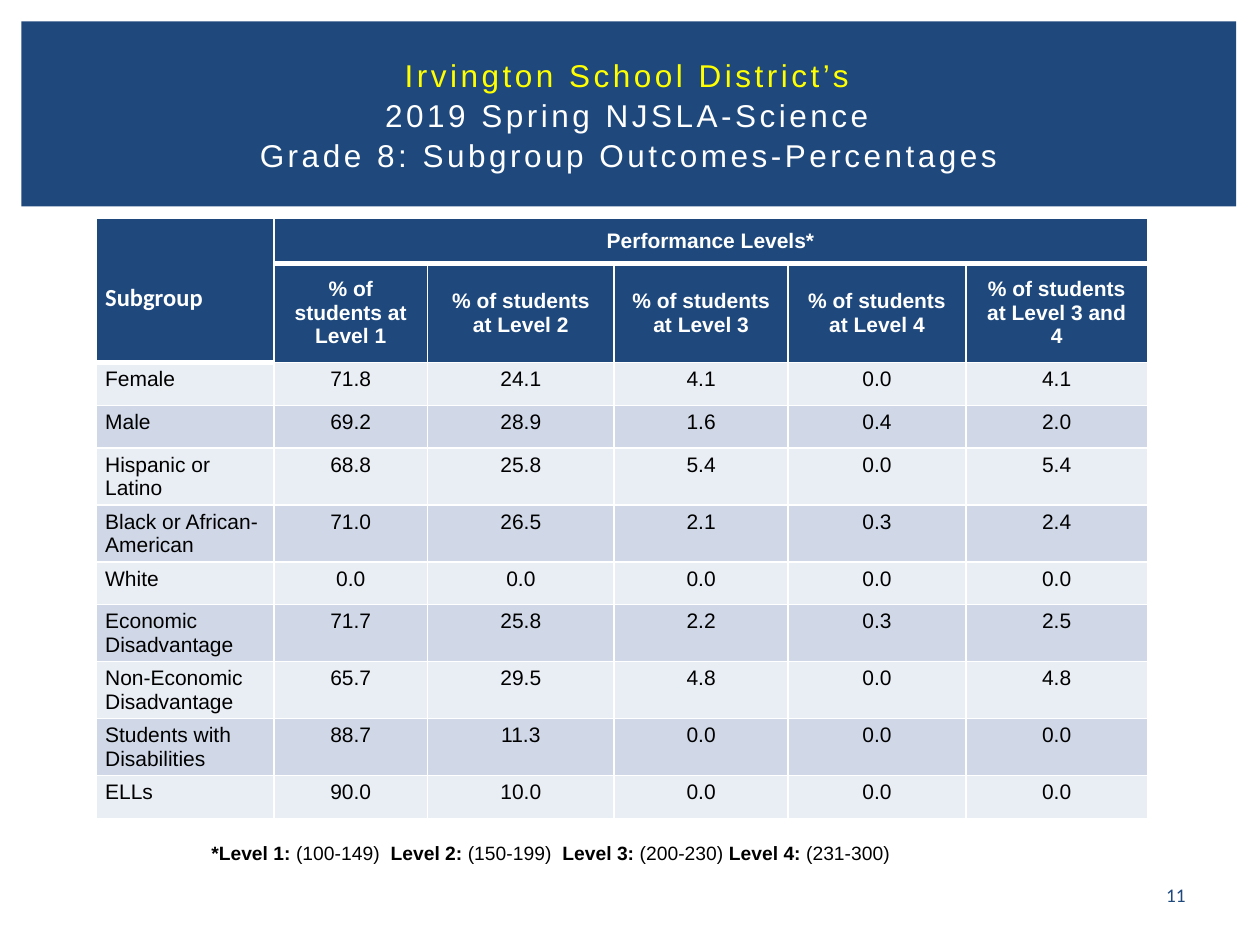
from collections import namedtuple
from dataclasses import dataclass

from lxml.etree import SubElement
from pptx import Presentation
from pptx.dml.color import RGBColor
from pptx.enum.shapes import MSO_SHAPE
from pptx.enum.text import MSO_ANCHOR, MSO_AUTO_SIZE, PP_ALIGN
from pptx.oxml.ns import qn
from pptx.util import Cm, Pt

Box = namedtuple("Box", "left top width height")


@dataclass(frozen=True)
class Theme:
    navy: str = "1F497D"
    white: str = "FFFFFF"
    black: str = "000000"
    yellow: str = "FFFF00"
    bands: tuple = ("E9EDF4", "D0D8E8")
    sans: str = "Arial"
    label: str = "Calibri"
    title: int = 18
    corner: int = 14
    cell: int = 12
    note: int = 11


THEME = Theme()
TITLE = [
    ("Irvington School District’s", THEME.yellow),
    ("2019 Spring NJSLA-Science", THEME.white),
    ("Grade 8: Subgroup Outcomes-Percentages", THEME.white),
]
LEVELS = ["1", "2", "3", "4", "3 and 4"]
ROWS = [
    ("Female", "71.8", "24.1", "4.1", "0.0", "4.1"),
    ("Male", "69.2", "28.9", "1.6", "0.4", "2.0"),
    ("Hispanic or Latino", "68.8", "25.8", "5.4", "0.0", "5.4"),
    ("Black or African-American", "71.0", "26.5", "2.1", "0.3", "2.4"),
    ("White", "0.0", "0.0", "0.0", "0.0", "0.0"),
    ("Economic Disadvantage", "71.7", "25.8", "2.2", "0.3", "2.5"),
    ("Non-Economic Disadvantage", "65.7", "29.5", "4.8", "0.0", "4.8"),
    ("Students with Disabilities", "88.7", "11.3", "0.0", "0.0", "0.0"),
    ("ELLs", "90.0", "10.0", "0.0", "0.0", "0.0"),
]
WIDTHS = [3.58, 3.1, 3.76, 3.51, 3.58, 3.66]
HEIGHTS = [0.91, 1.14] + [0.86] * len(ROWS)
NOTE = [
    ("*Level 1:", " (100-149)  "),
    ("Level 2:", " (150-199)  "),
    ("Level 3: ", "(200-230) "),
    ("Level 4:", " (231-300)"),
]


def place(box):
    return [Cm(side) for side in box]


def style(para, size, color, face=THEME.sans, bold=None, align=None):
    para.font.size = Pt(size)
    para.font.name = face
    para.font.bold = bold
    para.font.color.rgb = RGBColor.from_string(color)
    para.alignment = align


def add_title(slide, box):
    band = slide.shapes.add_shape(MSO_SHAPE.RECTANGLE, *place(box))
    band.shadow.inherit = False
    band.fill.solid()
    band.fill.fore_color.rgb = RGBColor.from_string(THEME.navy)
    band.line.fill.background()
    title = slide.shapes.title
    title.element.addprevious(band.element)
    pad, drop = 3.26, 0.56
    title.left, title.top, title.width, title.height = place(
        (box.left + pad, box.top + drop, box.width - 2 * pad, box.height - 2 * drop))
    frame = title.text_frame
    frame.auto_size = MSO_AUTO_SIZE.NONE
    frame.vertical_anchor = MSO_ANCHOR.MIDDLE
    para = frame.paragraphs[0]
    style(para, THEME.title, THEME.white, align=PP_ALIGN.CENTER)
    para.line_spacing = 1.05
    for index, (text, color) in enumerate(TITLE):
        if index:
            para.add_line_break()
        run = para.add_run()
        run.text = text
        run.font.color.rgb = RGBColor.from_string(color)
        run._r.get_or_add_rPr().set("spc", "200")


def rule(cell, base=1):
    props = cell._tc.get_or_add_tcPr()
    for index, (side, width) in enumerate((("L", 1), ("R", 1), ("T", 1), ("B", base))):
        line = SubElement(props, qn(f"a:ln{side}"), w=str(Pt(width)))
        fill = SubElement(line, qn("a:solidFill"))
        SubElement(fill, qn("a:srgbClr"), val=THEME.white)
        props.insert(index, line)


def fill_cell(cell, text, fill, color, inset=(0.18, 0.1), base=1, **look):
    cell.text = text
    cell.fill.solid()
    cell.fill.fore_color.rgb = RGBColor.from_string(fill)
    cell.margin_left = cell.margin_right = Cm(inset[0])
    cell.margin_top = cell.margin_bottom = Cm(inset[1])
    style(cell.text_frame.paragraphs[0], look.pop("size", THEME.cell), color, **look)
    rule(cell, base)


def fill_head(cell, text, base=1):
    fill_cell(cell, text, THEME.navy, THEME.white, (0.36, 0.13), base,
              bold=True, align=PP_ALIGN.CENTER)
    cell.vertical_anchor = MSO_ANCHOR.MIDDLE


def add_grid(slide, box):
    grid = slide.shapes.add_table(len(HEIGHTS), len(WIDTHS), *place(box)).table
    for column, width in zip(grid.columns, WIDTHS):
        column.width = Cm(width)
    for row, height in zip(grid.rows, HEIGHTS):
        row.height = Cm(height)
    last = len(WIDTHS) - 1
    grid.cell(0, 0).merge(grid.cell(1, 0))
    grid.cell(0, 1).merge(grid.cell(0, last))
    corner = grid.cell(0, 0)
    fill_cell(corner, "Subgroup", THEME.navy, THEME.white, base=3,
              size=THEME.corner, face=THEME.label, bold=True)
    corner.margin_top = Cm(1.3)
    rule(grid.cell(1, 0), 3)
    fill_head(grid.cell(0, 1), "Performance Levels*", 3)
    for col in range(2, last + 1):
        rule(grid.cell(0, col), 3)
    for col, level in enumerate(LEVELS, 1):
        fill_head(grid.cell(1, col), f"% of students at Level {level}")
    for index, row in enumerate(ROWS):
        for col, text in enumerate(row):
            fill_cell(grid.cell(index + 2, col), text, THEME.bands[index % 2], THEME.black,
                      bold=False, align=PP_ALIGN.CENTER if col else PP_ALIGN.LEFT)


def add_text(slide, box):
    frame = slide.shapes.add_textbox(*place(box)).text_frame
    frame.word_wrap = True
    return frame


def add_note(slide, box):
    frame = add_text(slide, box)
    frame.auto_size = MSO_AUTO_SIZE.SHAPE_TO_FIT_TEXT
    para = frame.paragraphs[0]
    style(para, THEME.note, THEME.black)
    for pair in NOTE:
        for text, bold in zip(pair, (True, False)):
            run = para.add_run()
            run.text = text
            run.font.bold = bold


def add_page(slide, box):
    frame = add_text(slide, box)
    frame.vertical_anchor = MSO_ANCHOR.MIDDLE
    frame.text = "11"
    style(frame.paragraphs[0], THEME.note, THEME.navy, THEME.label, align=PP_ALIGN.CENTER)


def main():
    deck = Presentation()
    deck.slide_width, deck.slide_height = Cm(25.4), Cm(19.05)
    slide = deck.slides.add_slide(deck.slide_layouts[5])
    add_title(slide, Box(0.43, 0.43, 24.49, 3.73))
    add_grid(slide, Box(1.94, 4.4, sum(WIDTHS), sum(HEIGHTS)))
    add_page(slide, Box(22.89, 17.65, 1.63, 0.76))
    add_note(slide, Box(4.01, 16.84, 15.85, 0.74))
    deck.save("out.pptx")


if __name__ == "__main__":
    main()
